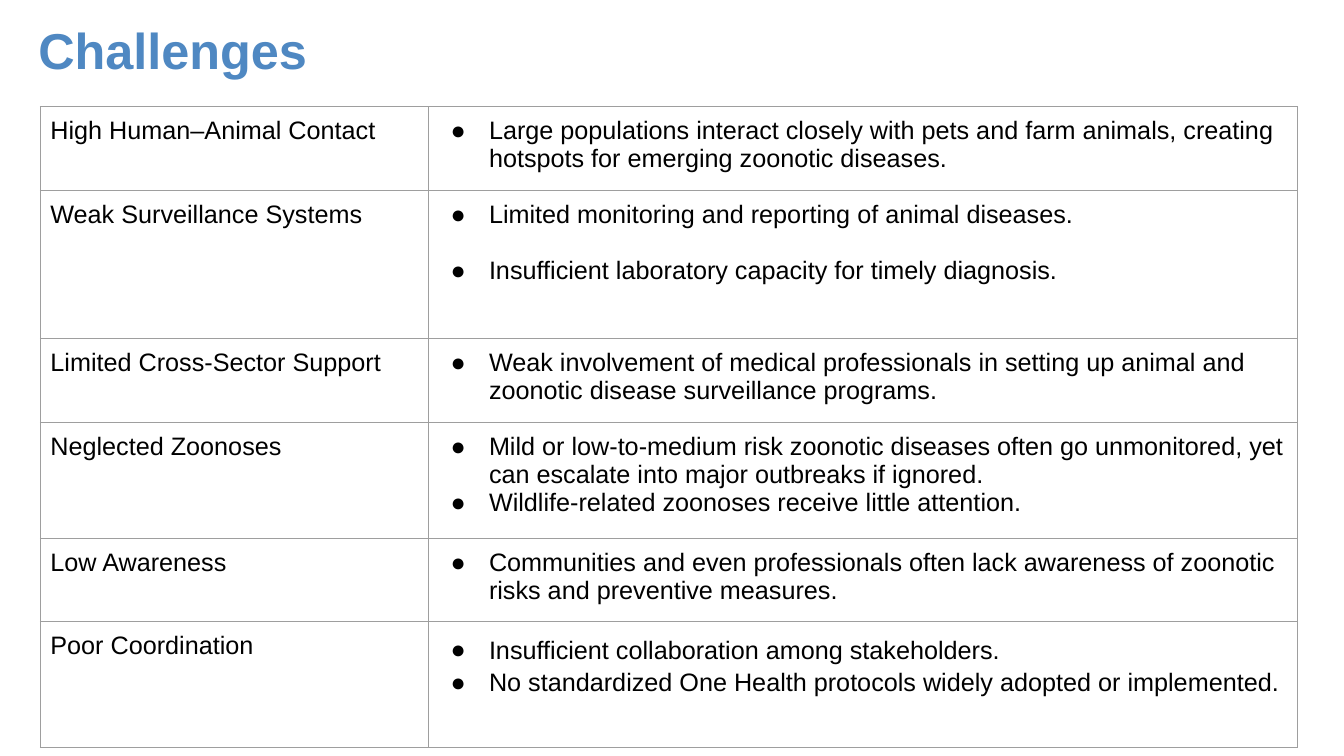
from dataclasses import dataclass

from lxml import etree
from pptx import Presentation
from pptx.dml.color import RGBColor
from pptx.enum.text import MSO_ANCHOR, PP_ALIGN
from pptx.oxml.ns import qn
from pptx.util import Inches, Pt

LEFT = PP_ALIGN.LEFT
MIDDLE = MSO_ANCHOR.MIDDLE
TITLE_ONLY = 5
FONT = "Arial"
BLUE, BLACK, GREY = "4F88C2", "000000", "9E9E9E"
COLUMN_WIDTHS = (3.85, 8.62)


@dataclass
class Challenge:
    name: str
    points: list[str]
    height: float = 0.83
    gap: float = 0
    line_spacing: float = 1.0


CHALLENGES = [
    Challenge("High Human–Animal Contact", [
        "Large populations interact closely with pets and farm animals, "
        "creating hotspots for emerging zoonotic diseases."]),
    Challenge("Weak Surveillance Systems", [
        "Limited monitoring and reporting of animal diseases.",
        "Insufficient laboratory capacity for timely diagnosis."],
        height=1.47, gap=20),
    Challenge("Limited Cross-Sector Support", [
        "Weak involvement of medical professionals in setting up animal and "
        "zoonotic disease surveillance programs."]),
    Challenge("Neglected Zoonoses", [
        "Mild or low-to-medium risk zoonotic diseases often go unmonitored, "
        "yet can escalate into major outbreaks if ignored.",
        "Wildlife-related zoonoses receive little attention."], height=1.15),
    Challenge("Low Awareness", [
        "Communities and even professionals often lack awareness of zoonotic "
        "risks and preventive measures."]),
    Challenge("Poor Coordination", [
        "Insufficient collaboration among stakeholders.",
        "No standardized One Health protocols widely adopted or implemented."],
        height=1.25, line_spacing=1.15),
]


def colour(value: str) -> RGBColor:
    return RGBColor.from_string(value)


def format_runs(paragraph, size: float, text_colour: str, bold: bool = False) -> None:
    for span in paragraph.runs:
        span.font.name = FONT
        span.font.size = Pt(size)
        span.font.bold = bold
        span.font.color.rgb = colour(text_colour)


def add_bullet(paragraph) -> None:
    properties = paragraph._p.get_or_add_pPr()
    properties.set("marL", str(Inches(0.5)))
    properties.set("indent", str(Inches(-0.38)))
    bullet_colour = etree.SubElement(properties, qn("a:buClr"))
    etree.SubElement(bullet_colour, qn("a:srgbClr"), val=BLACK)
    etree.SubElement(properties, qn("a:buFont"), typeface=FONT)
    etree.SubElement(properties, qn("a:buChar"), char="●")


def format_cell(cell) -> None:
    cell.margin_left = cell.margin_right = Inches(0.1)
    cell.margin_top = cell.margin_bottom = Inches(0.1)
    properties = cell._tc.get_or_add_tcPr()
    for side in ("lnL", "lnR", "lnT", "lnB"):
        line = etree.SubElement(properties, qn(f"a:{side}"), w=str(Pt(0.75)))
        fill = etree.SubElement(line, qn("a:solidFill"))
        etree.SubElement(fill, qn("a:srgbClr"), val=GREY)
    cell.fill.background()


def add_title(page, text: str) -> None:
    title = page.shapes.title
    title.left, title.top = Inches(0.38), Inches(0)
    title.width, title.height = Inches(10.4), Inches(1.06)
    frame = title.text_frame
    frame.text = text
    frame.vertical_anchor = MIDDLE
    frame.margin_left, frame.margin_right = Inches(0), Inches(0.07)
    frame.margin_top = frame.margin_bottom = Inches(0.04)
    paragraph = frame.paragraphs[0]
    paragraph.alignment = LEFT
    paragraph.line_spacing = 0.9
    format_runs(paragraph, 36, BLUE, bold=True)


def fill_row(row, challenge: Challenge) -> None:
    row.height = Inches(challenge.height)
    name_cell, points_cell = row.cells
    for cell in (name_cell, points_cell):
        format_cell(cell)
    name_cell.text_frame.text = challenge.name
    format_runs(name_cell.text_frame.paragraphs[0], 18, BLACK)

    points_cell.text_frame.text = "\n".join(challenge.points)
    for index, paragraph in enumerate(points_cell.text_frame.paragraphs):
        add_bullet(paragraph)
        paragraph.line_spacing = challenge.line_spacing
        if index and challenge.gap:
            paragraph.space_before = Pt(challenge.gap)
        format_runs(paragraph, 18, BLACK)


def add_challenge_table(page, challenges: list[Challenge]) -> None:
    height = sum(challenge.height for challenge in challenges)
    table = page.shapes.add_table(
        len(challenges), len(COLUMN_WIDTHS), Inches(0.4), Inches(1.06),
        Inches(sum(COLUMN_WIDTHS)), Inches(height)).table
    table.first_row = table.horz_banding = False
    for column, width in zip(table.columns, COLUMN_WIDTHS):
        column.width = Inches(width)
    for row, challenge in zip(table.rows, challenges):
        fill_row(row, challenge)


def main() -> None:
    deck = Presentation()
    deck.slide_width, deck.slide_height = Inches(13.33), Inches(7.5)
    page = deck.slides.add_slide(deck.slide_layouts[TITLE_ONLY])

    # Heading
    add_title(page, "Challenges")

    # Challenges and their details
    add_challenge_table(page, CHALLENGES)

    deck.save("out.pptx")


if __name__ == "__main__":
    main()
